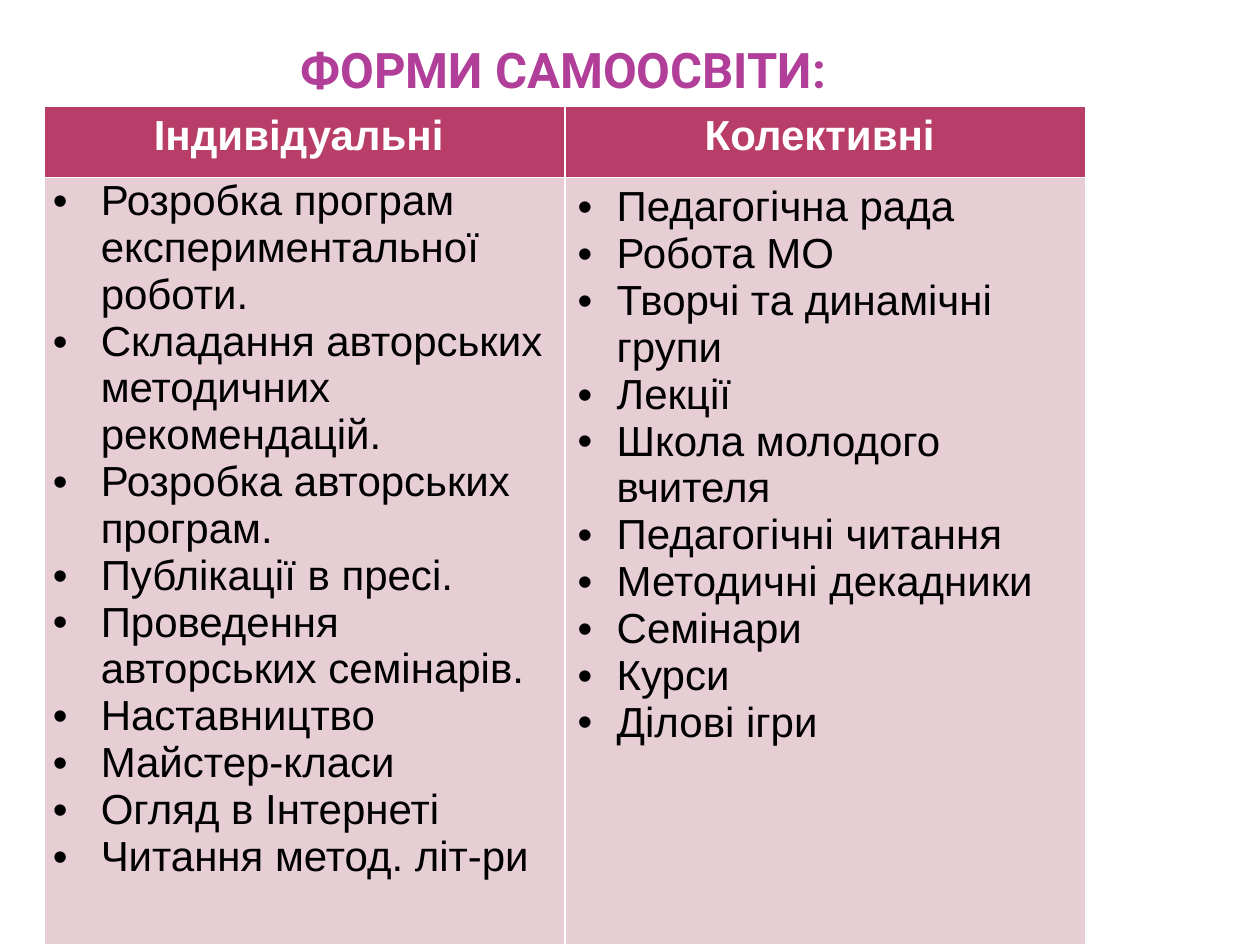
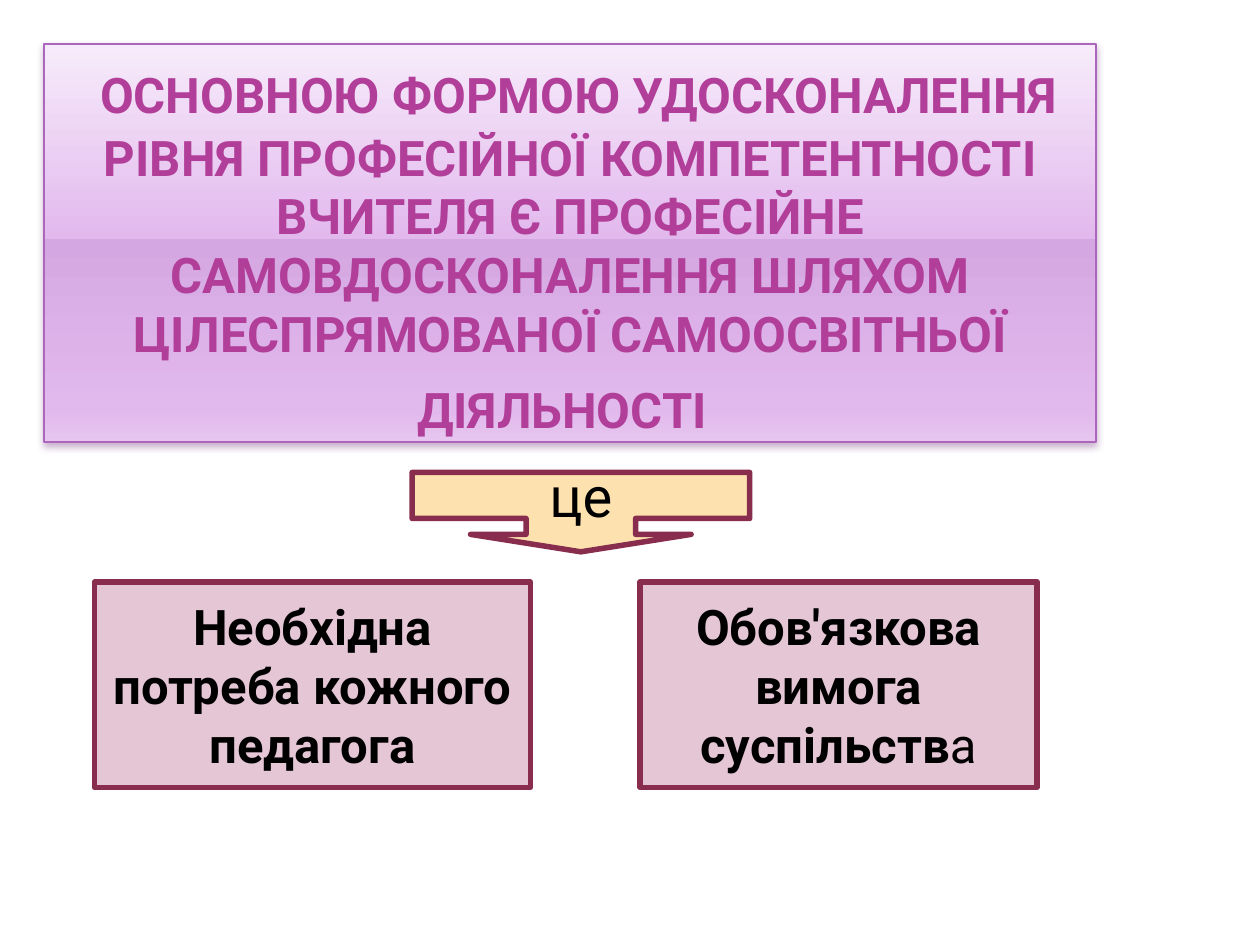
from dataclasses import dataclass
from typing import Any, NamedTuple

from lxml.etree import SubElement
from pptx import Presentation
from pptx.dml.color import RGBColor
from pptx.enum.shapes import MSO_SHAPE as Preset
from pptx.enum.text import MSO_ANCHOR as Anchor, MSO_AUTO_SIZE as AutoSize, PP_ALIGN as Align
from pptx.oxml.ns import qn
from pptx.util import Emu, Pt

PX = 9144

WHITE = RGBColor(0xFF, 0xFF, 0xFF)
BLACK = RGBColor(0x00, 0x00, 0x00)
MAGENTA = RGBColor(0xB1, 0x3F, 0x9A)
CRIMSON = RGBColor(0xB8, 0x3D, 0x68)
BLUSH = RGBColor(0xE6, 0xCE, 0xD4)
ROSE = RGBColor(0xE5, 0xC6, 0xD5)
CREAM = RGBColor(0xFD, 0xE2, 0xB0)
WINE = RGBColor(0x88, 0x2D, 0x4D)
LILAC_LINE = RGBColor(0xAC, 0x66, 0xBB)
LILAC_SHADOW = RGBColor(0x6E, 0x30, 0x7B)
LILAC_STOPS = [
    (0, RGBColor(0xF7, 0xEB, 0xFB)),
    (49, RGBColor(0xE2, 0xB9, 0xED)),
    (49, RGBColor(0xD5, 0xA7, 0xE2)),
    (92, RGBColor(0xE2, 0xB9, 0xED)),
    (100, RGBColor(0xE6, 0xC6, 0xEF)),
]

TITLE_FRAME = {
    "word_wrap": True, "auto_size": AutoSize.NONE, "vertical_anchor": Anchor.BOTTOM,
    "margin_left": Emu(5 * PX), "margin_right": Emu(5 * PX), "margin_top": 0, "margin_bottom": 0,
}
BOX_FRAME = {"word_wrap": True, "vertical_anchor": Anchor.MIDDLE}
TITLE_FONT = {"name": "Roboto", "size": Pt(28), "bold": True}
TITLE_EDGE_FONT = {**TITLE_FONT, "size": Pt(38)}
CALLOUT_FONT = {"name": "Roboto", "size": Pt(32), "bold": False}
BOX_FONT = {"name": "Roboto", "size": Pt(28), "bold": True}
LIGHT_BOX_FONT = {**BOX_FONT, "bold": False}
HEADER_FONT = {"name": "Arial", "size": Pt(24), "bold": True}
LIST_FONT = {**HEADER_FONT, "bold": False}


class Place(NamedTuple):
    left: int
    top: int
    width: int
    height: int


class Span(NamedTuple):
    text: str
    font: dict[str, Any]


@dataclass(frozen=True)
class Box:
    place: Place
    preset: Preset
    fill: RGBColor
    spans: list[Span]
    adjustments: tuple[float, ...] = ()


@dataclass(frozen=True)
class Column:
    header: str
    items: list[str]
    indent: int
    margins: dict[str, int]


COLUMNS = [
    Column("Індивідуальні ", [
        "Розробка програм експериментальної роботи.",
        "Складання авторських методичних рекомендацій.",
        "Розробка авторських програм.",
        "Публікації в пресі.",
        "Проведення авторських семінарів.",
        "Наставництво",
        "Майстер-класи",
        "Огляд в Інтернеті",
        "Читання метод. літ-ри",
    ], 38, {"margin_left": 7 * PX, "margin_right": 7 * PX, "margin_top": 0, "margin_bottom": 0}),
    Column("Колективні ", [
        "Педагогічна рада",
        "Робота МО",
        "Творчі та динамічні групи",
        "Лекції",
        "Школа молодого вчителя",
        "Педагогічні читання",
        "Методичні декадники",
        "Семінари",
        "Курси",
        "Ділові ігри",
    ], 31, {}),
]

BOXES = [
    Box(Place(327, 375, 268, 63), Preset.DOWN_ARROW_CALLOUT, CREAM,
        [Span("це", CALLOUT_FONT)], (1.38, 1.39, 0.22, 0.58)),
    Box(Place(75, 462, 346, 163), Preset.RECTANGLE, ROSE,
        [Span("Необхідна потреба кожного педагога", BOX_FONT)]),
    Box(Place(508, 462, 315, 163), Preset.RECTANGLE, ROSE,
        [Span("Обов'язкова вимога суспільств", BOX_FONT), Span("а", LIGHT_BOX_FONT)]),
]


def apply_format(target: Any, values: dict[str, Any]) -> None:
    for name, value in values.items():
        setattr(target, name, value)


def to_emu(place: Place) -> list[Emu]:
    return [Emu(length * PX) for length in place]


def write_spans(para: Any, spans: list[Span], color: RGBColor) -> None:
    for span in spans:
        run = para.add_run()
        run.text = span.text
        apply_format(run.font, span.font)
        run.font.color.rgb = color


def write_centred(frame: Any, spans: list[Span], color: RGBColor) -> None:
    para = frame.paragraphs[0]
    para.alignment = Align.CENTER
    write_spans(para, spans, color)


def add_titled_page(deck: Any, place: Place, spans: list[Span]) -> Any:
    page = deck.slides.add_slide(deck.slide_layouts[5])
    title = page.shapes.title
    apply_format(title, dict(zip(Place._fields, to_emu(place))))
    apply_format(title.text_frame, TITLE_FRAME)
    write_centred(title.text_frame, spans, MAGENTA)
    return page


def add_bullet(para: Any, indent: int) -> None:
    properties = para._p.get_or_add_pPr()
    properties.set("marL", str(indent * PX))
    properties.set("indent", str(-indent * PX))
    SubElement(properties, qn("a:buFont"), typeface="Arial")
    SubElement(properties, qn("a:buChar"), char="•")


def add_forms_table(page: Any, place: Place, header_height: int) -> None:
    table = page.shapes.add_table(2, len(COLUMNS), *to_emu(place)).table
    table.rows[0].height = Emu(header_height * PX)
    table.rows[1].height = Emu((place.height - header_height) * PX)
    for index, column in enumerate(COLUMNS):
        header, body = table.cell(0, index), table.cell(1, index)
        for cell, color in ((header, CRIMSON), (body, BLUSH)):
            cell.fill.solid()
            cell.fill.fore_color.rgb = color
        write_centred(header.text_frame, [Span(column.header, HEADER_FONT)], WHITE)
        apply_format(body, column.margins)
        for number, item in enumerate(column.items):
            frame = body.text_frame
            para = frame.add_paragraph() if number else frame.paragraphs[0]
            add_bullet(para, column.indent)
            write_spans(para, [Span(item, LIST_FONT)], BLACK)


def style_lilac_panel(panel: Any) -> None:
    panel.fill.gradient()
    panel.fill.gradient_angle = 270
    panel.line.color.rgb = LILAC_LINE
    panel.line.width = Pt(0.9)
    panel.shadow.inherit = False
    properties = panel._element.spPr
    stops = properties.find(qn("a:gradFill")).find(qn("a:gsLst"))
    for stop in list(stops):
        stops.remove(stop)
    for percent, color in LILAC_STOPS:
        stop = SubElement(stops, qn("a:gs"), pos=str(percent * 1000))
        SubElement(stop, qn("a:srgbClr"), val=str(color))
    shadow = SubElement(
        properties.find(qn("a:effectLst")), qn("a:outerShdw"),
        blurRad=str(Pt(4)), dist=str(Pt(2)), dir="5400000", rotWithShape="0",
    )
    shade = SubElement(shadow, qn("a:srgbClr"), val=str(LILAC_SHADOW))
    SubElement(shade, qn("a:alpha"), val="38000")


def add_box(page: Any, box: Box) -> None:
    shape = page.shapes.add_shape(box.preset, *to_emu(box.place))
    for index, value in enumerate(box.adjustments):
        shape.adjustments[index] = value
    shape.shadow.inherit = False
    shape.fill.solid()
    shape.fill.fore_color.rgb = box.fill
    shape.line.color.rgb = WINE
    shape.line.width = Pt(3.15)
    apply_format(shape.text_frame, BOX_FRAME)
    write_centred(shape.text_frame, box.spans, BLACK)


def add_forms_page(deck: Any) -> None:
    page = add_titled_page(deck, Place(51, 21, 792, 57), [Span("ФОРМИ САМООСВІТИ:", TITLE_FONT)])
    add_forms_table(page, Place(35, 84, 827, 666), 57)


def add_purpose_page(deck: Any) -> None:
    page = add_titled_page(deck, Place(35, 35, 835, 316), [
        Span(" ", TITLE_EDGE_FONT),
        Span("ОСНОВНОЮ ФОРМОЮ УДОСКОНАЛЕННЯ РІВНЯ ПРОФЕСІЙНОЇ КОМПЕТЕНТНОСТІ ВЧИТЕЛЯ Є "
             "ПРОФЕСІЙНЕ САМОВДОСКОНАЛЕННЯ ШЛЯХОМ ЦІЛЕСПРЯМОВАНОЇ САМООСВІТНЬОЇ ДІЯЛЬНОСТІ",
             TITLE_FONT),
        Span(" ", TITLE_EDGE_FONT),
    ])
    style_lilac_panel(page.shapes.title)
    for box in BOXES:
        add_box(page, box)


def main() -> None:
    deck = Presentation()
    deck.slide_width, deck.slide_height = Emu(1000 * PX), Emu(750 * PX)
    add_forms_page(deck)
    add_purpose_page(deck)
    deck.save("out.pptx")


if __name__ == "__main__":
    main()
